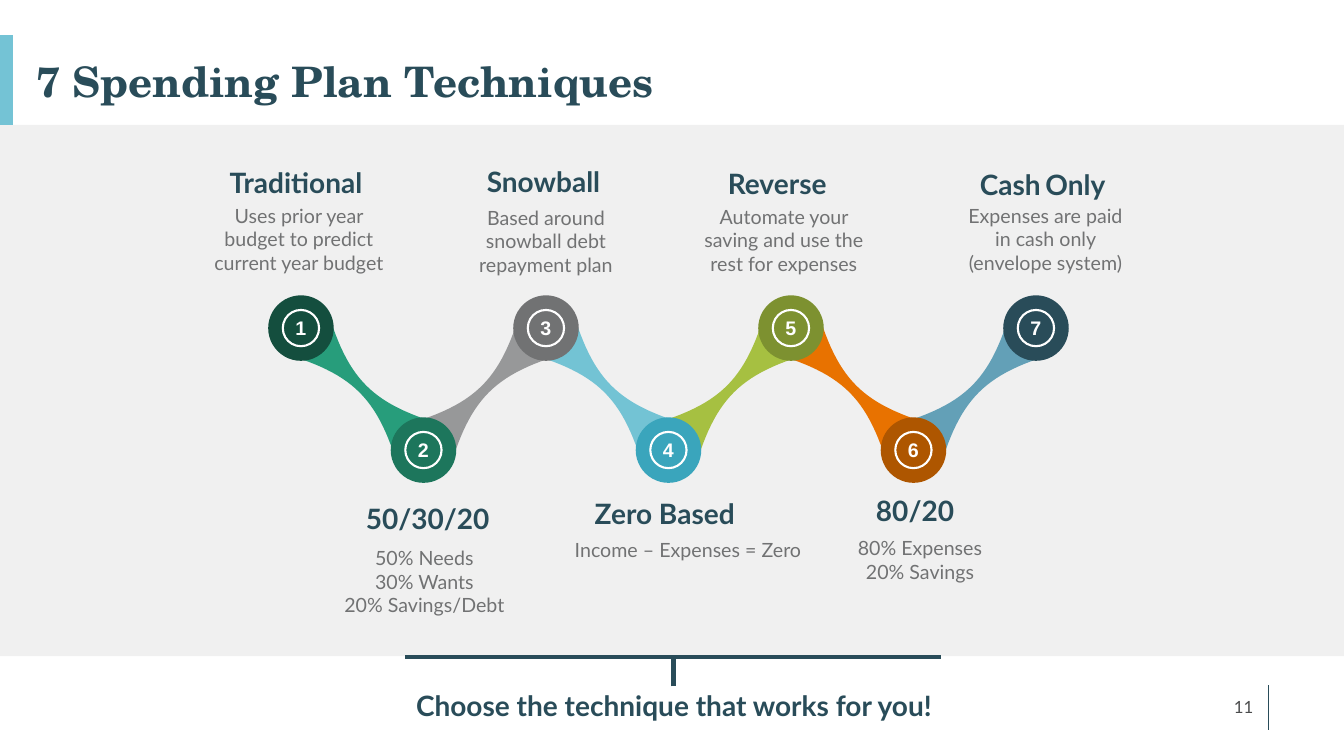
import pptx
import pptx.util
import pptx.dml.color
import pptx.enum.shapes
import pptx.enum.text
import pptx.oxml.ns
import lxml.etree

Inches = pptx.util.Inches
ALIGN = pptx.enum.text.PP_ALIGN
ANCHOR = pptx.enum.text.MSO_ANCHOR
SHAPE = pptx.enum.shapes.MSO_SHAPE

COLORS = {"band": "F0F0F0", "accent": "74C3D5", "navy": "294C59", "gray": "717273",
          "number": "4B4C4D", "white": "FFFFFF"}
TITLE = {"name": "TeX Gyre Schola", "size": 30, "bold": True, "color": COLORS["navy"]}
HEADING = {"name": "Lato", "size": 20, "bold": True, "color": COLORS["navy"]}
BODY = {"name": "Lato", "size": 14, "bold": False, "color": COLORS["gray"]}
NUMBER = {"name": "Lato", "size": 12, "bold": False, "color": COLORS["number"]}
DIGIT = {"name": "Arial", "size": 14, "bold": True, "color": COLORS["white"]}
SMALL_SPACE = {"name": "Arial", "size": 12, "bold": True, "color": COLORS["navy"]}

NODE_LEFT, NODE_STEP, NODE_SIZE = 2.66, 1.215, 0.65
NODE_TOPS = (2.93, 4.14)
RING_SIZE = 0.36
LINK_OFFSET, LINK_TOP, LINK_SIZE = 0.26, 3.18, 1.36
# Bezier control points of one link edge, measured from the link's top left
LINK_EDGE = ((0, 0.36), (0.58, 0.55), (0.81, 0.78), (1, 1.36))
LINK_SEGMENTS = 24

NODE_COLORS = ["144E3E", "1D765C", "717273", "3AA5BC", "7D9130", "AE5600", "294C59"]
LINK_COLORS = ["279D7B", "979899", "73C3D4", "A6C041", "E87200", "63A0B7"]

# heading, its left and top, description, its left, top, width and height
TECHNIQUES = [
    ("Traditional", 2.18, 1.59, "Uses prior year budget to predict current year budget",
     (2.01, 1.97, 1.91, 0.81)),
    ("50/30/20", 3.53, 4.93, "50% Needs\n30% Wants\n20% Savings/Debt",
     (3.13, 5.37, 2.16, 0.81)),
    ("Snowball", 4.73, 1.58, "Based around snowball debt repayment plan",
     (4.34, 1.99, 2.15, 0.81)),
    ("Zero Based", 5.8, 4.88, "Income – Expenses = Zero", (5.56, 5.29, 2.53, 0.34)),
    ("Reverse", 7.12, 1.6, "Automate your saving and use the rest for expenses",
     (6.8, 1.98, 1.95, 0.81)),
    ("80/20", 8.59, 4.85, "80% Expenses\n20% Savings", (8.25, 5.27, 1.75, 0.57)),
    (("Cash", " ", "Only"), 9.62, 1.61, "Expenses are paid in cash only (envelope system)",
     (9.49, 1.97, 1.76, 0.81)),
]


def rgb(color):
    return pptx.dml.color.RGBColor.from_string(color)


def format_font(font, style):
    values = {"name": style["name"], "size": pptx.util.Pt(style["size"]), "bold": style["bold"]}
    for attribute, value in values.items():
        setattr(font, attribute, value)
    font.color.rgb = rgb(style["color"])


def write_text(frame, text, style, align):
    frame.text = text
    for paragraph in frame.paragraphs:
        paragraph.alignment = align
        for run in paragraph.runs:
            format_font(run.font, style)


def add_text(shapes, box, text, style, align=ALIGN.LEFT, anchor=ANCHOR.TOP):
    frame = shapes.add_textbox(*map(Inches, box)).text_frame
    frame.word_wrap = True
    frame.vertical_anchor = anchor
    write_text(frame, text, style, align)
    return frame


def add_line(shapes, start, end, color, width):
    line = shapes.add_connector(pptx.enum.shapes.MSO_CONNECTOR.STRAIGHT,
                                *map(Inches, start + end))
    line.line.color.rgb = rgb(color)
    line.line.width = pptx.util.Pt(width)
    lxml.etree.SubElement(line._element.spPr, pptx.oxml.ns.qn("a:effectLst"))


def paint(shape, color):
    shape.shadow.inherit = False
    shape.fill.solid()
    shape.fill.fore_color.rgb = rgb(color)
    shape.line.fill.background()


def add_filled(shapes, kind, box, color):
    paint(shapes.add_shape(kind, *map(Inches, box)), color)


def add_ring(shapes, left, top, digit):
    ring = shapes.add_shape(SHAPE.OVAL, *map(Inches, (left, top, RING_SIZE, RING_SIZE)))
    ring.shadow.inherit = False
    ring.fill.background()
    ring.line.color.rgb = rgb(COLORS["white"])
    ring.line.width = pptx.util.Pt(1.5)
    frame = ring.text_frame
    for side in ("left", "top", "right", "bottom"):
        setattr(frame, f"margin_{side}", 0)
    frame.vertical_anchor = ANCHOR.MIDDLE
    write_text(frame, digit, DIGIT, ALIGN.CENTER)


def bezier_point(t):
    weights = ((1 - t) ** 3, 3 * t * (1 - t) ** 2, 3 * t * t * (1 - t), t ** 3)
    return tuple(sum(weight * point[axis] for weight, point in zip(weights, LINK_EDGE))
                 for axis in (0, 1))


def add_link(shapes, left, rising, color):
    """Draw a waisted band; its second edge is the first turned by half a turn."""
    edge = [bezier_point(step / LINK_SEGMENTS) for step in range(LINK_SEGMENTS + 1)]
    outline = edge + [(LINK_SIZE - x, LINK_SIZE - y) for x, y in edge]
    if rising:
        outline = [(LINK_SIZE - x, y) for x, y in outline]
    points = [(Inches(left + x), Inches(LINK_TOP + y)) for x, y in outline]
    builder = shapes.build_freeform(*points[0])
    builder.add_line_segments(points[1:], close=True)
    paint(builder.convert_to_shape(), color)


def add_chain(shapes):
    for index, color in enumerate(LINK_COLORS):
        left = NODE_LEFT + LINK_OFFSET + index * NODE_STEP
        add_link(shapes, left, index % 2 == 1, color)
    inset = (NODE_SIZE - RING_SIZE) / 2
    for index, color in enumerate(NODE_COLORS):
        left, top = NODE_LEFT + index * NODE_STEP, NODE_TOPS[index % 2]
        add_filled(shapes, SHAPE.OVAL, (left, top, NODE_SIZE, NODE_SIZE), color)
        add_ring(shapes, left + inset, top + inset, str(index + 1))


def add_technique(shapes, heading, left, top, description, box):
    parts = (heading,) if isinstance(heading, str) else heading
    frame = add_text(shapes, (left, top, 1.76, 0.44), parts[0], HEADING)
    for part in parts[1:]:
        run = frame.paragraphs[0].add_run()
        run.text = part
        format_font(run.font, HEADING if part.strip() else SMALL_SPACE)
    add_text(shapes, box, description, BODY, ALIGN.CENTER)


def set_title(title, text):
    for attribute, value in zip(("left", "top", "width", "height"), (0.26, 0.35, 11.5, 0.76)):
        setattr(title, attribute, Inches(value))
    title.text_frame.vertical_anchor = ANCHOR.BOTTOM
    write_text(title.text_frame, text, TITLE, ALIGN.LEFT)
    title.text_frame.paragraphs[0].line_spacing = 0.9


def add_call_to_action(shapes):
    group = shapes.add_group_shape().shapes
    add_text(group, (3.84, 6.78, 5.69, 0.44), "Choose the technique that works for you!",
             HEADING, ALIGN.CENTER)
    add_line(group, (4.02, 6.52), (9.33, 6.52), COLORS["navy"], 3)
    add_line(group, (6.68, 6.81), (6.68, 6.52), COLORS["navy"], 3)


def main():
    presentation = pptx.Presentation()
    presentation.slide_width = Inches(13.33)
    presentation.slide_height = Inches(7.5)
    slide = presentation.slides.add_slide(presentation.slide_layouts[5])
    shapes = slide.shapes
    set_title(shapes.title, "7 Spending Plan Techniques")
    add_filled(shapes, SHAPE.RECTANGLE, (0, 1.24, 13.33, 5.27), COLORS["band"])
    add_line(shapes, (0.06, 1.24), (0.06, 0.35), COLORS["accent"], 10)
    add_line(shapes, (12.58, 6.8), (12.58, 7.24), COLORS["navy"], 0.75)
    add_text(shapes, (9.53, 6.81, 3, 0.4), "11", NUMBER, ALIGN.RIGHT, ANCHOR.MIDDLE)
    add_chain(shapes)
    for technique in TECHNIQUES:
        add_technique(shapes, *technique)
    add_call_to_action(shapes)
    presentation.save("out.pptx")


if __name__ == "__main__":
    main()
